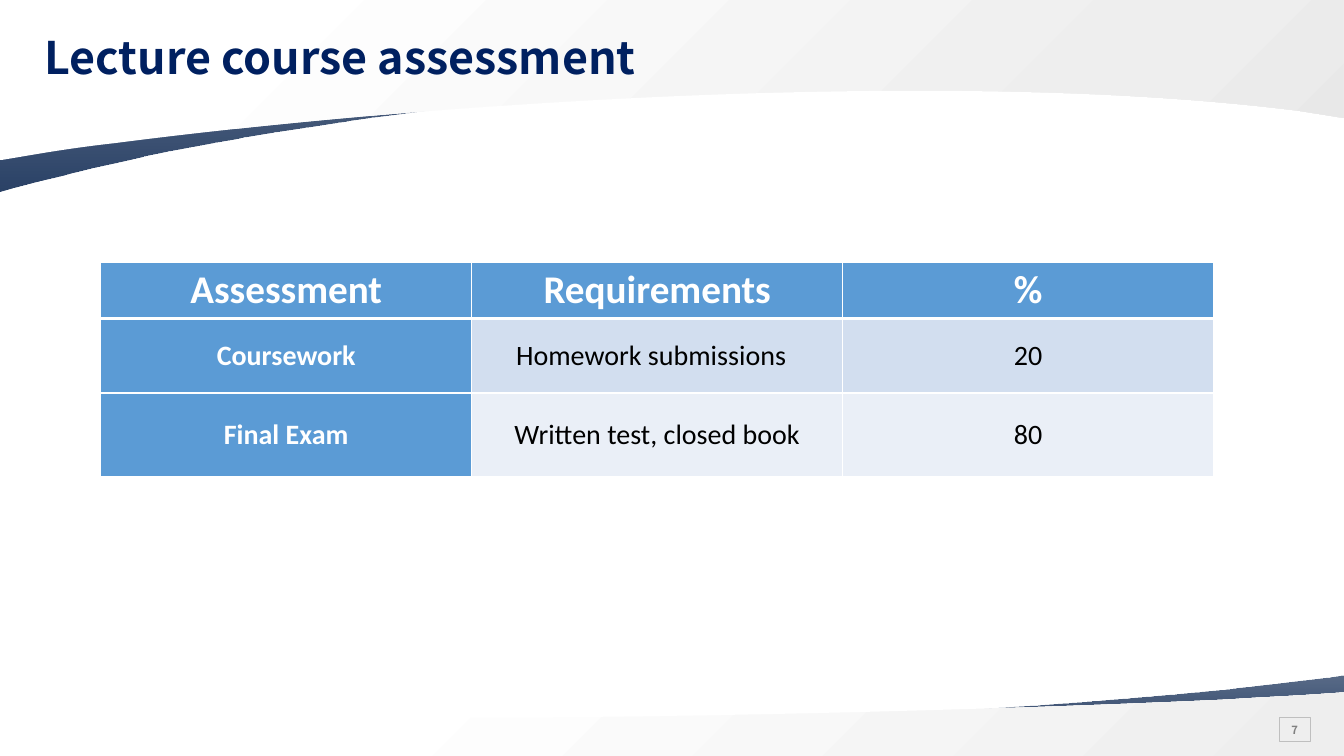
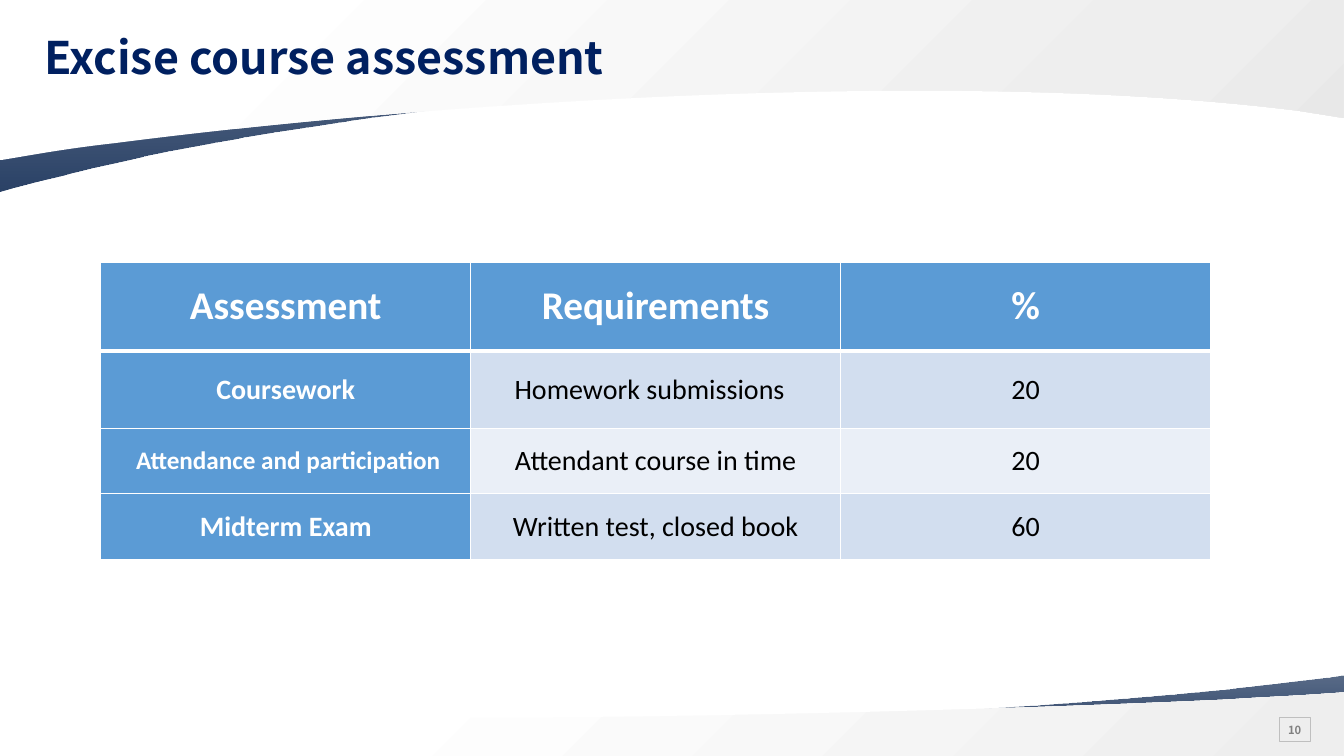
"""Builds two course assessment slides."""
from dataclasses import dataclass

from pptx import Presentation
from pptx.dml.color import RGBColor
from pptx.enum.shapes import MSO_SHAPE
from pptx.enum.text import MSO_ANCHOR, PP_ALIGN
from pptx.oxml import parse_xml
from pptx.oxml.ns import nsdecls
from pptx.util import Inches, Pt

SCALE = 9144


@dataclass(frozen=True)
class Theme:
    """Holds colours, fonts and type sizes."""
    navy: str = "122C55"
    title: str = "002060"
    head: str = "5B9BD5"
    odd: str = "D2DEEF"
    even: str = "EAEFF7"
    white: str = "FFFFFF"
    black: str = "000000"
    pale: str = "EEEEEE"
    mist: str = "E8E8E8"
    frame: str = "BFBFBF"
    grey: str = "808080"
    sans: str = "Noto Sans CJK SC"
    body: str = "Calibri"
    large: int = 32
    top: int = 28
    base: int = 20
    small: int = 18
    tiny: int = 8


THEME = Theme()
BLUES = [(0, THEME.navy, 90), (100, THEME.navy, 70)]
BANDS = [
    ([(1333, 670), (1333, 735), (0, 735), (0, 708), (1, 708),
      (301, 741, 820, 717, 1119, 693), (1179, 688, 1247, 681, 1319, 672)],
     BLUES, 270),
    ([(1333, 687), (1333, 750), (0, 750), (0, 703), (44, 705),
      (392, 721, 910, 708, 1219, 694), (1246, 692, 1274, 691, 1304, 689)],
     [(26, THEME.white, 100), (100, THEME.pale, 100)], 45),
    ([(0, 190), (0, 50), (1333, 50), (1333, 108), (1332, 108),
      (1032, 37, 514, 88, 214, 141), (154, 152, 86, 167, 14, 186)],
     BLUES, 270),
    ([(0, 159), (0, -15), (1333, -15), (1333, 117), (1289, 110),
      (942, 66, 423, 102, 114, 142), (87, 145, 59, 149, 30, 154)],
     [(17, THEME.white, 100), (81, THEME.pale, 100), (100, THEME.mist, 100)], 45),
]
HEADS = ["Assessment", "Requirements", "%"]
WORK = ["Coursework", "Homework submissions", "20"]
TWEAKS = {
    "Homework submissions": {"right": 19},
    "Attendance and participation": {"left": 12, "size": THEME.small},
}
PAGES = [
    ("Lecture course assessment", 7, 368, [56, 74, 83],
     [HEADS, WORK, ["Final Exam", "Written test, closed book", "80"]]),
    ("Excise course assessment", 10, 367, [88, 77, 65, 65],
     [HEADS, WORK,
      ["Attendance and participation", "Attendant course in time", "20"],
      ["Midterm Exam", "Written test, closed book", "60"]]),
]


def px(*vals):
    """Turns px lengths into EMU."""
    return [val * SCALE for val in vals]


def tint(code):
    """Gives the colour for a hex code."""
    return RGBColor.from_string(code)


def write(frame, text, *, size, color, font, bold=True, align=PP_ALIGN.CENTER, space=None):
    """Puts one formatted paragraph in a text frame."""
    para = frame.paragraphs[0]
    para.alignment, para.line_spacing = align, space
    run = para.add_run()
    run.text = text
    face = run.font
    face.size, face.name, face.bold = Pt(size), font, bold
    face.color.rgb = tint(color)


def bend(shape, parts):
    """Turns the straight sides that have control points into curves."""
    sides = list(shape._element.spPr.iter("{*}lnTo"))
    for side, part in zip(sides, parts[1:]):
        if len(part) == 2:
            continue
        spots = px(*part)
        marks = "".join(f'<a:pt x="{x - shape.left}" y="{y - shape.top}"/>'
                        for x, y in zip(spots[::2], spots[1::2]))
        curve = parse_xml(f'<a:cubicBezTo {nsdecls("a")}>{marks}</a:cubicBezTo>')
        side.getparent().replace(side, curve)


class Deck:
    """Holds the style and the current slide."""

    def __init__(self, theme):
        self.theme = theme
        self.show = Presentation()
        self.show.slide_width, self.show.slide_height = Inches(40 / 3), Inches(7.5)
        self.slide = None

    def page(self):
        """Starts a slide with its bands."""
        self.slide = self.show.slides.add_slide(self.show.slide_layouts[6])
        for parts, stops, angle in BANDS:
            self.band(parts, stops, angle)

    def band(self, parts, stops, angle):
        """Draws a curved band with a gradient."""
        ends = [px(*part[-2:]) for part in parts]
        pen = self.slide.shapes.build_freeform(*ends[0], scale=1.0)
        pen.add_line_segments(ends[1:], close=True)
        shape = pen.convert_to_shape()
        bend(shape, parts)
        shape.shadow.inherit = False
        shape.line.fill.background()
        shape.fill.background()
        marks = "".join(
            f'<a:gs pos="{at * 1000}"><a:srgbClr val="{code}">'
            f'<a:alpha val="{alpha * 1000}"/></a:srgbClr></a:gs>'
            for at, code, alpha in stops)
        blend = parse_xml(f'<a:gradFill {nsdecls("a")} rotWithShape="1"><a:gsLst>{marks}'
                          f'</a:gsLst><a:lin ang="{angle * 60000}" scaled="0"/></a:gradFill>')
        props = shape._element.spPr
        props.replace(props.find("{*}noFill"), blend)

    def title(self, text):
        """Adds the slide title."""
        frame = self.slide.shapes.add_textbox(*px(36, 21, 1200, 77)).text_frame
        frame.word_wrap = True
        frame.vertical_anchor = MSO_ANCHOR.MIDDLE
        frame.margin_left, frame.margin_right = px(8, 0)
        write(frame, text, size=self.theme.large, color=self.theme.title,
              font=self.theme.sans, align=PP_ALIGN.LEFT, space=0.9)

    def number(self, count):
        """Adds the framed page number."""
        box = self.slide.shapes.add_shape(MSO_SHAPE.RECTANGLE, *px(1269, 712, 31, 24))
        box.shadow.inherit = False
        box.fill.background()
        box.line.color.rgb = tint(self.theme.frame)
        box.line.width = Pt(0.75)
        frame = box.text_frame
        frame.word_wrap = False
        frame.vertical_anchor = MSO_ANCHOR.MIDDLE
        frame.margin_left, frame.margin_right, frame.margin_top, frame.margin_bottom = px(8, 8, 8, 8)
        write(frame, str(count), size=self.theme.tiny, color=self.theme.grey,
              font=self.theme.sans)

    def table(self, width, heights, rows):
        """Adds the assessment table."""
        count = len(rows[0])
        grid = self.slide.shapes.add_table(
            len(rows), count, *px(100, 260, width * count, sum(heights))).table
        grid.horz_banding = False
        for column in grid.columns:
            column.width = px(width)[0]
        for r, (height, row) in enumerate(zip(heights, rows)):
            grid.rows[r].height = px(height)[0]
            for c, text in enumerate(row):
                self.cell(grid.cell(r, c), text, r, c, **TWEAKS.get(text, {}))

    def cell(self, cell, text, row, col, left=7, right=7, size=None):
        """Fills and borders one table cell."""
        theme = self.theme
        strong = row == 0 or col == 0
        cell.vertical_anchor = MSO_ANCHOR.MIDDLE
        cell.margin_left, cell.margin_right, cell.margin_top, cell.margin_bottom = px(left, right, 0, 0)
        props = cell._tc.get_or_add_tcPr()
        for side in "LRTB":
            thick = (row, side) in ((0, "B"), (1, "T"))
            props.append(parse_xml(
                f'<a:ln{side} {nsdecls("a")} w="{Pt(3 if thick else 1)}"><a:solidFill>'
                f'<a:srgbClr val="{theme.white}"/></a:solidFill></a:ln{side}>'))
        cell.fill.solid()
        cell.fill.fore_color.rgb = tint(
            theme.head if strong else theme.odd if row % 2 else theme.even)
        write(cell.text_frame, text, size=size or (theme.base if row else theme.top),
              color=theme.white if strong else theme.black, font=theme.body, bold=strong)


def main():
    """Builds and saves the deck."""
    deck = Deck(THEME)
    for title, count, width, heights, rows in PAGES:
        deck.page()
        deck.number(count)
        deck.title(title)
        deck.table(width, heights, rows)
    deck.show.save("out.pptx")


if __name__ == "__main__":
    main()
